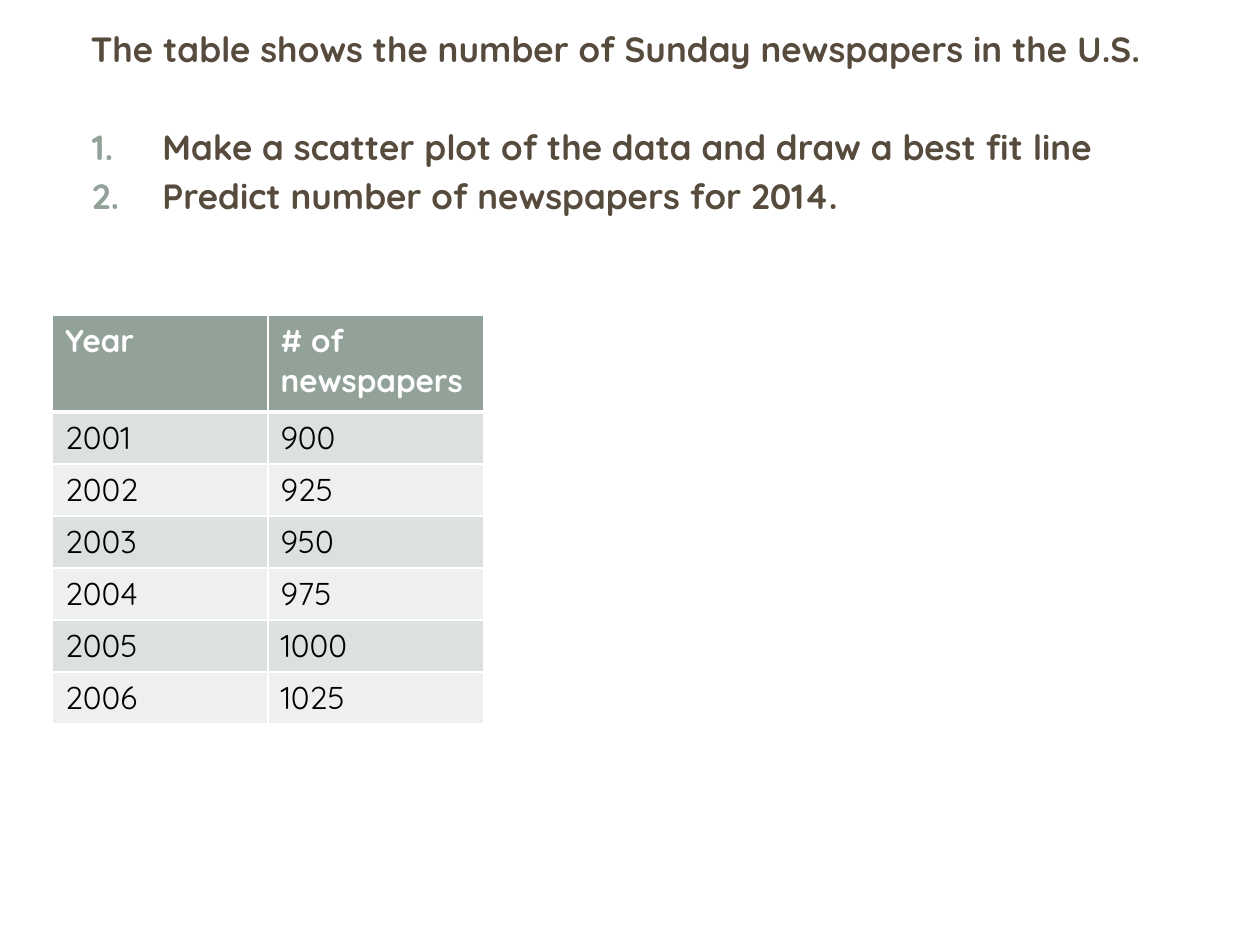
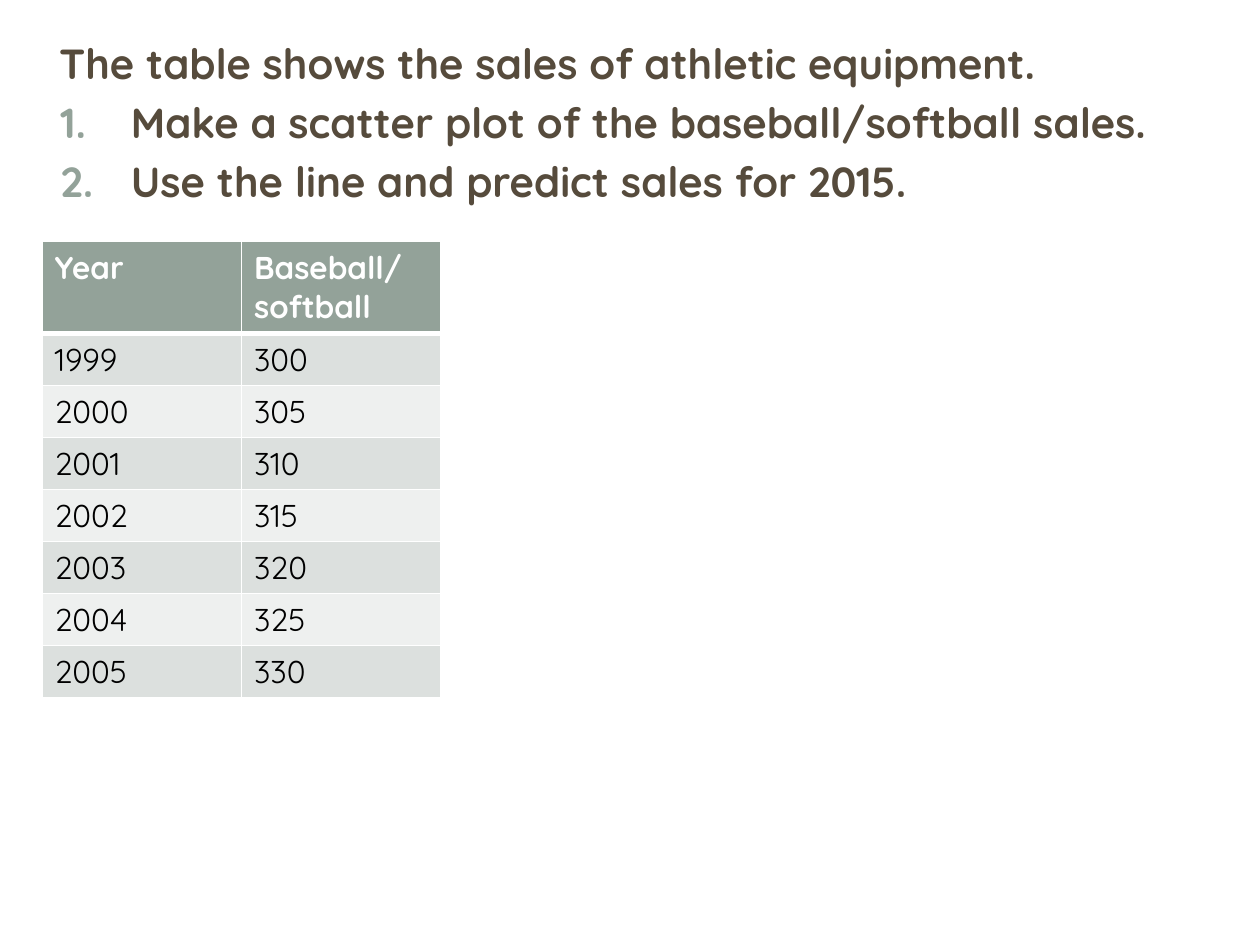
"""Two scatter plot exercises, each with its instructions and a data table."""
from lxml.etree import SubElement
from pptx import Presentation
from pptx.dml.color import RGBColor
from pptx.enum.shapes import MSO_SHAPE as SHAPE
from pptx.oxml.ns import qn
from pptx.util import Inches, Pt

FONT = "Quicksand"
BROWN = RGBColor(0x56, 0x4B, 0x3C)
SAGE = RGBColor(0x93, 0xA2, 0x99)
BANDS = (RGBColor(0xDC, 0xE0, 0xDE), RGBColor(0xEE, 0xF0, 0xEF))
WHITE = RGBColor(0xFF, 0xFF, 0xFF)
BLACK = RGBColor(0x00, 0x00, 0x00)

PANELS = [
    (SHAPE.ROUNDED_RECTANGLE, (0.1, 0.11, 9.8, 7.29), 100),
    (SHAPE.RECTANGLE, (0.3, 0.3, 9.4, 1.45), 83),
    (SHAPE.RECTANGLE, (0.41, 0.41, 9.17, 1.22), 100),
]

EXERCISES = [
    {
        "intro": "The table shows the number of Sunday newspapers in the U.S.",
        "tasks": ["Make a scatter plot of the data and draw a best fit line",
                  "Predict number of newspapers for 2014."],
        "text_at": (0.5, 0.17, 9.08, 2.33), "size": 20, "extra_gap": 28,
        "table_at": (5 / 12, 2.5), "column": 1.71,
        "header_height": 0.77, "body_height": 2.48,
        "header": ("Year", "# of newspapers"),
        "first_year": 2001, "values": range(900, 1026, 25),
    },
    {
        "intro": "The table shows the sales of athletic equipment.",
        "tasks": ["Make a scatter plot of the baseball/softball sales.",
                  "Use the line and predict sales for 2015."],
        "text_at": (0.25, 0.25, 9.28, 1.54), "size": 24, "extra_gap": 0,
        "table_at": (4 / 12, 23 / 12), "column": 19 / 12,
        "header_height": 0.73, "body_height": 2.89,
        "header": ("Year", "Baseball/ softball"),
        "first_year": 1999, "values": range(300, 331, 5),
    },
]


def add_text(paragraph, text, size, color, bold):
    run = paragraph.add_run()
    run.text = text
    run.font.name = FONT
    run.font.size = Pt(size)
    run.font.bold = bold
    run.font.color.rgb = color


def add_border(cell, side, width):
    line = SubElement(cell._tc.get_or_add_tcPr(), qn(f"a:ln{side}"), w=str(Pt(width)))
    fill = SubElement(line, qn("a:solidFill"))
    SubElement(fill, qn("a:srgbClr"), val=str(WHITE))


deck = Presentation()
deck.slide_width, deck.slide_height = Inches(10), Inches(7.5)

for exercise in EXERCISES:
    slide = deck.slides.add_slide(deck.slide_layouts[6])

    for outline, place, opacity in PANELS:
        panel = slide.shapes.add_shape(outline, *map(Inches, place))
        panel.shadow.inherit = False
        panel.line.fill.background()
        panel.fill.solid()
        panel.fill.fore_color.rgb = WHITE
        if outline == SHAPE.ROUNDED_RECTANGLE:
            panel.adjustments[0] = 0.02
        if opacity < 100:
            tint = panel._element.spPr.find(qn("a:solidFill")).find(qn("a:srgbClr"))
            SubElement(tint, qn("a:alpha"), val=str(opacity * 1000))

    instructions = slide.shapes.add_textbox(*map(Inches, exercise["text_at"])).text_frame
    instructions.word_wrap = True
    intro = instructions.paragraphs[0]
    intro._p.get_or_add_pPr().set("marL", str(Inches(0.12)))
    add_text(intro, exercise["intro"], exercise["size"], BROWN, True)

    for number, wording in enumerate(exercise["tasks"]):
        task = instructions.add_paragraph()
        gap = 0.2 * exercise["size"]
        task.space_before = Pt(gap if number else gap + exercise["extra_gap"])
        numbering = task._p.get_or_add_pPr()
        numbering.set("marL", str(Inches(0.69)))
        numbering.set("indent", str(Inches(-0.56)))
        SubElement(SubElement(numbering, qn("a:buClr")), qn("a:srgbClr"), val=str(SAGE))
        SubElement(numbering, qn("a:buFont"), typeface=FONT)
        SubElement(numbering, qn("a:buAutoNum"), type="arabicPeriod")
        add_text(task, wording, exercise["size"], BROWN, True)

    records = [exercise["header"], *enumerate(exercise["values"], exercise["first_year"])]
    row_height = exercise["body_height"] / len(exercise["values"])
    left, top = exercise["table_at"]
    data = slide.shapes.add_table(
        len(records), 2, Inches(left), Inches(top), Inches(2 * exercise["column"]),
        Inches(exercise["header_height"] + exercise["body_height"])).table
    for column in data.columns:
        column.width = Inches(exercise["column"])

    for index, record in enumerate(records):
        is_header = index == 0
        data.rows[index].height = Inches(exercise["header_height"] if is_header else row_height)
        for cell, entry in zip(data.rows[index].cells, record):
            add_border(cell, "L", 1)
            add_border(cell, "R", 1)
            add_border(cell, "T", 3 if index == 1 else 1)
            add_border(cell, "B", 3 if is_header else 1)
            cell.fill.solid()
            cell.fill.fore_color.rgb = SAGE if is_header else BANDS[(index - 1) % 2]
            add_text(cell.text_frame.paragraphs[0], str(entry), 18,
                     WHITE if is_header else BLACK, is_header)

deck.save("out.pptx")
